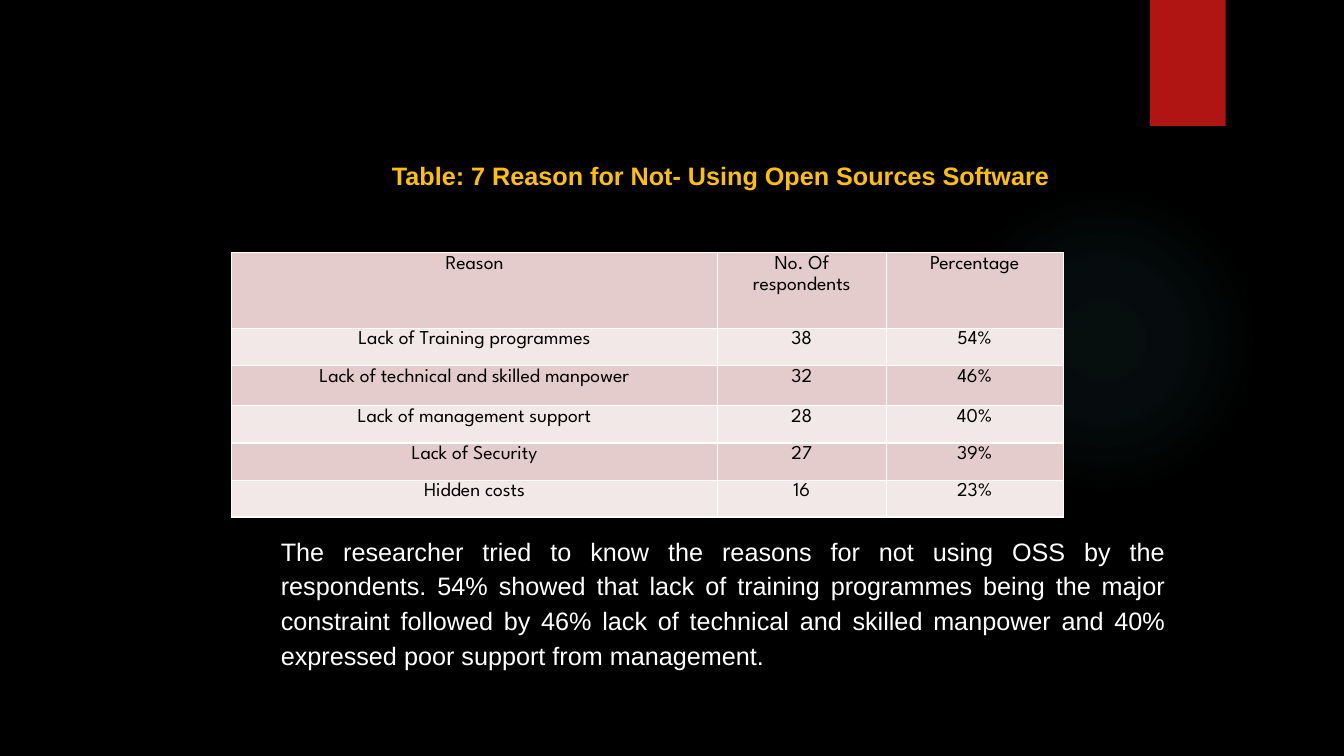
import pptx
import pptx.util
import pptx.dml.color
import pptx.enum.shapes
import pptx.enum.text
import pptx.oxml
import pptx.oxml.ns
import lxml.etree

Pt = pptx.util.Pt
RGB = pptx.dml.color.RGBColor
ALIGN = pptx.enum.text.PP_ALIGN
SHAPE = pptx.enum.shapes.MSO_SHAPE
qn = pptx.oxml.ns.qn

BLACK = RGB(0x00, 0x00, 0x00)
WHITE = RGB(0xFF, 0xFF, 0xFF)
RED = RGB(0xB0, 0x15, 0x13)
GOLD = RGB(0xFF, 0xC0, 0x00)
TEAL = RGB(0x50, 0xB9, 0xC1)
ROSE = RGB(0xE4, 0xCC, 0xCC)
PALE = RGB(0xF2, 0xE8, 0xE7)

COLS = [347, 120.5, 126.5]
ROWS = [54, 26.6, 28.8, 26.6, 26.6, 26.2]
CELLS = [
    ("Reason", "No. Of respondents", "Percentage"),
    ("Lack of Training programmes", "38", "54%"),
    ("Lack of technical and skilled manpower", "32", "46%"),
    ("Lack of management support", "28", "40%"),
    ("Lack of Security", "27", "39%"),
    ("Hidden costs", "16", "23%"),
]
TITLE = "Table: 7 Reason for Not- Using Open Sources Software"
BODY = (
    "The researcher tried to know the reasons for not using OSS by the "
    "respondents. 54% showed that lack of training programmes being the major "
    "constraint followed by 46% lack of technical and skilled manpower and 40% "
    "expressed poor support from management."
)


def write(frame, text, size=18, face="Arial", color=WHITE, bold=False,
          align=ALIGN.LEFT, space=1.0):
    """Put one formatted paragraph into a text frame."""
    frame.word_wrap = True
    para = frame.paragraphs[0]
    para.text = text
    para.alignment = align
    para.line_spacing = space
    font = para.runs[0].font
    font.size, font.name, font.bold = Pt(size), face, bold
    font.color.rgb = color


def add_text(slide, box, text, **form):
    """Add a text box with one paragraph."""
    write(slide.shapes.add_textbox(*map(Pt, box)).text_frame, text, **form)


def add_plain(slide, kind, box, color):
    """Add a filled shape with no line and no shadow."""
    shape = slide.shapes.add_shape(kind, *map(Pt, box))
    shape.shadow.inherit = False
    shape.fill.solid()
    shape.fill.fore_color.rgb = color
    shape.line.fill.background()
    return shape


def add_glow(slide, box):
    """Add a soft round light that fades to its rim."""
    props = add_plain(slide, SHAPE.OVAL, box, TEAL)._element.spPr
    stops = "".join(
        f'<a:gs pos="{pos * 1000}"><a:srgbClr val="{TEAL}">'
        f'<a:alpha val="{alpha * 1000}"/></a:srgbClr></a:gs>'
        for pos, alpha in [(0, 7), (36, 6), (69, 0), (100, 0)])
    fade = pptx.oxml.parse_xml(
        f'<a:gradFill {pptx.oxml.ns.nsdecls("a")}><a:gsLst>{stops}</a:gsLst>'
        '<a:path path="circle"><a:fillToRect l="50000" t="50000" '
        'r="50000" b="50000"/></a:path></a:gradFill>')
    props.replace(props.find(qn("a:solidFill")), fade)


def add_edges(cell):
    """Draw white borders on the four sides of a cell."""
    props = cell._tc.get_or_add_tcPr()
    for place, side in enumerate(("lnL", "lnR", "lnT", "lnB")):
        edge = lxml.etree.Element(qn(f"a:{side}"), w=str(Pt(1)))
        fill = lxml.etree.SubElement(edge, qn("a:solidFill"))
        lxml.etree.SubElement(fill, qn("a:srgbClr"), val=str(WHITE))
        props.insert(place, edge)


def add_grid(slide, left, top):
    """Add the table of reasons with banded rows."""
    table = slide.shapes.add_table(
        len(ROWS), len(COLS), Pt(left), Pt(top),
        Pt(sum(COLS)), Pt(sum(ROWS))).table
    for col, width in zip(table.columns, COLS):
        col.width = Pt(width)
    for i, (row, height, texts) in enumerate(zip(table.rows, ROWS, CELLS)):
        row.height = Pt(height)
        for cell, text in zip(row.cells, texts):
            cell.margin_left = cell.margin_right = Pt(5)
            cell.margin_top = cell.margin_bottom = 0
            cell.fill.solid()
            cell.fill.fore_color.rgb = PALE if i % 2 else ROSE
            add_edges(cell)
            write(cell.text_frame, text, size=14, face="League Spartan",
                  color=BLACK, align=ALIGN.CENTER, space=1.15)


def main():
    """Build the slide and save it."""
    deck = pptx.Presentation()
    deck.slide_width, deck.slide_height = Pt(960), Pt(540)
    slide = deck.slides.add_slide(deck.slide_layouts[6])
    slide.background.fill.solid()
    slide.background.fill.fore_color.rgb = BLACK
    add_glow(slide, (677.5, 131.8, 221.8, 221.8))
    add_plain(slide, SHAPE.RECTANGLE, (821.5, 0, 54, 90), RED)
    add_grid(slide, 165.5, 180.5)
    add_text(slide, (272.9, 110.9, 484.6, 28.8), TITLE, color=GOLD, bold=True)
    add_text(slide, (193.5, 376, 646, 111), BODY,
             align=ALIGN.JUSTIFY, space=1.15)
    deck.save("out.pptx")


if __name__ == "__main__":
    main()
